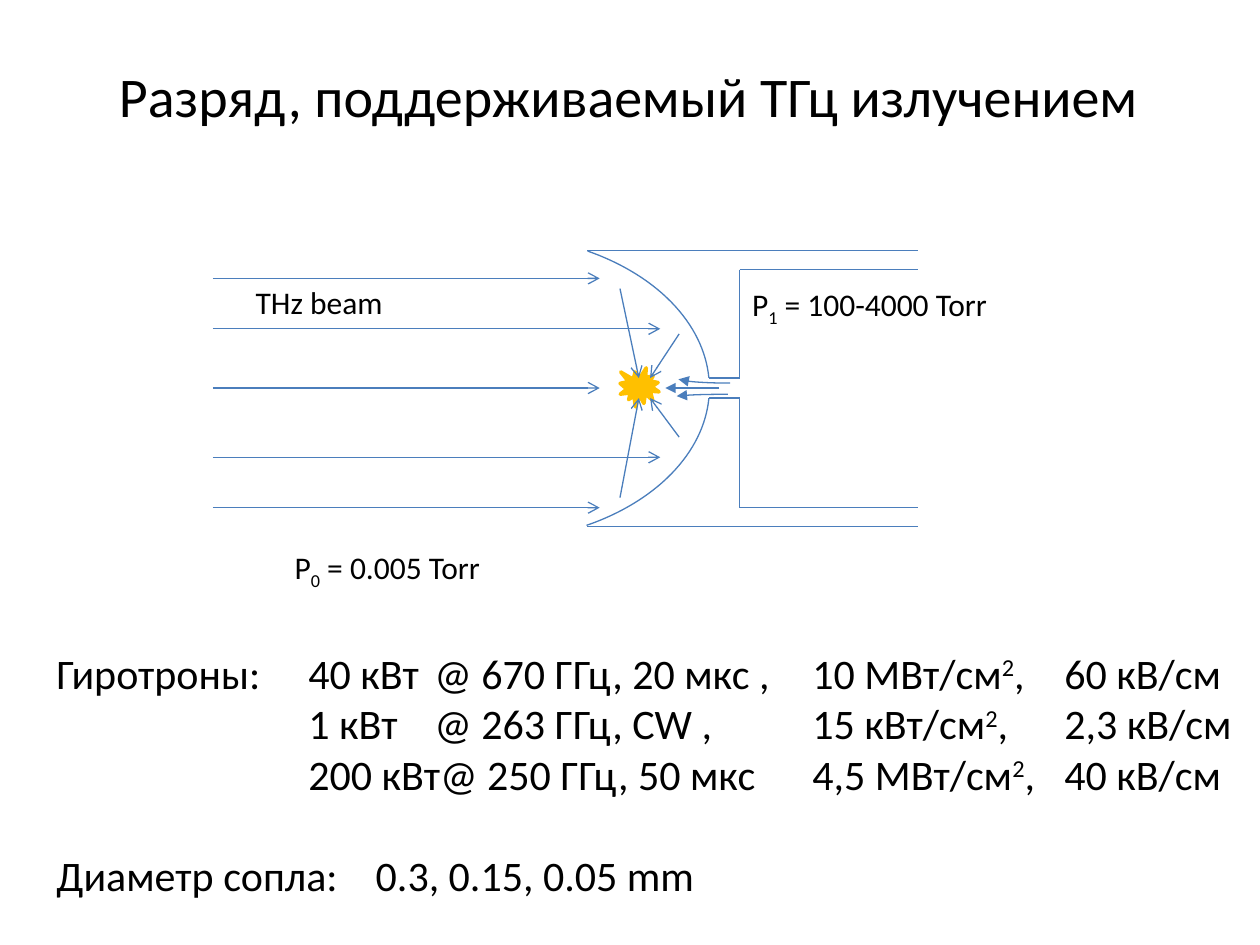
from lxml import etree
from pptx import Presentation
from pptx.dml.color import RGBColor
from pptx.enum.shapes import MSO_CONNECTOR, MSO_SHAPE
from pptx.enum.text import MSO_ANCHOR, PP_ALIGN
from pptx.oxml.ns import qn
from pptx.util import Pt

BLACK = RGBColor(0x00, 0x00, 0x00)
WHITE = RGBColor(0xFF, 0xFF, 0xFF)
BLUE = RGBColor(0x4B, 0x7E, 0xBC)
AMBER = RGBColor(0xFF, 0xC0, 0x00)
STRAIGHT = MSO_CONNECTOR.STRAIGHT
ARC, RECT, SEAL = MSO_SHAPE.ARC, MSO_SHAPE.RECTANGLE, MSO_SHAPE.EXPLOSION1
LEFT, CENTER = PP_ALIGN.LEFT, PP_ALIGN.CENTER
TOP, MIDDLE = MSO_ANCHOR.TOP, MSO_ANCHOR.MIDDLE
FONT = "Calibri"

TITLE = "Разряд, поддерживаемый ТГц излучением"
GYROTRONS = [
    ["Гиротроны:\t40 кВт\t@ 670 ГГц, 20 мкс ,\t10 МВт/см", ("2", 30), ", \t60 кВ/см"],
    ["\t1 кВт \t@ 263 ГГц, CW , \t15 кВт/см", ("2", 30), ", \t2,3 кВ/см"],
    ["\t200 кВт@ 250 ГГц, 50 мкс \t4,5 МВт/см", ("2", 30), ", \t40 кВ/см"],
]
NOZZLE = ["Диаметр сопла:\t0.3, 0.15, 0.05 mm"]

AXIS = 87.84
BEAMS = [(25.2, 221), (54, 255.6), (AXIS, 221), (127.4, 255.6), (156.2, 221)]
RAYS = [
    (232.6, 31, 243.4, 82.1),
    (266.4, 56.9, 249.8, 82.1),
    (232.6, 150.5, 243.4, 93.6),
    (266.4, 115.9, 249.8, 93.6),
]
HALVES = [(9.36, 20.16, 82.08), (167.04, 156.24, 93.6)]
MIRROR_EDGE, THROAT, CHAMBER, WALL_END = 213.84, 283.68, 300.96, 403
JETS = [(265, 79.2, 58.3, 5.8, False), (262.1, 91.4, 62.6, 3.6, True)]


def add_text(shapes, box, paragraphs, size=18, align=LEFT, anchor=TOP, wrap=True):
    tf = shapes.add_textbox(*map(Pt, box)).text_frame
    tf.word_wrap = wrap
    tf.vertical_anchor = anchor
    for i, runs in enumerate(paragraphs):
        p = tf.paragraphs[0] if i == 0 else tf.add_paragraph()
        p.alignment = align
        for run in runs:
            text, shift = run if isinstance(run, tuple) else (run, 0)
            r = p.add_run()
            r.text = text
            r.font.name = FONT
            r.font.size = Pt(size)
            r.font.color.rgb = BLACK
            if shift:
                r.font._element.set("baseline", str(shift * 1000))
    return tf


def set_tabs(p, stops):
    tabs = etree.SubElement(p._p.get_or_add_pPr(), qn("a:tabLst"))
    for stop in stops:
        etree.SubElement(tabs, qn("a:tab"), pos=str(Pt(stop)), algn="l")


def set_line(sp, color=BLUE, width=0.75, tail=None):
    sp.line.color.rgb = color
    sp.line.width = Pt(width)
    if tail:
        ln = sp._element.spPr.find(qn("a:ln"))
        etree.SubElement(ln, qn("a:tailEnd"), type=tail)


def add_line(shapes, x, y, x1, y1, x2, y2, tail=None):
    s = shapes.add_connector(STRAIGHT, Pt(x + x1), Pt(y + y1), Pt(x + x2), Pt(y + y2))
    set_line(s, tail=tail)
    etree.SubElement(s._element.spPr, qn("a:effectLst"))


def add_solid(shapes, kind, box, color):
    sp = shapes.add_shape(kind, *map(Pt, box))
    sp.shadow.inherit = False
    sp.fill.solid()
    sp.fill.fore_color.rgb = color
    sp.line.fill.background()
    return sp


def add_arc(shapes, box, start, end, tail=None, flip=False):
    sp = shapes.add_shape(ARC, *map(Pt, box))
    sp.adjustments[0] = start
    sp.adjustments[1] = end
    sp.fill.background()
    set_line(sp, tail=tail)
    sp.shadow.inherit = False
    if flip:
        sp._element.spPr.find(qn("a:xfrm")).set("flipV", "1")


def add_title(slide, box):
    add_text(slide.shapes, box, [[TITLE]], size=32, align=CENTER, anchor=MIDDLE)


def add_diagram(slide, x, y):
    shapes = slide.shapes.add_group_shape().shapes
    seal = add_solid(shapes, SEAL, (x + 232.6, y + 76.3, 22.3, 22.3), AMBER)
    set_line(seal, color=AMBER, width=2)
    add_arc(shapes, (x + 28.8, y, 254.9, 2 * AXIS), 183.896, 32.334)
    for level, end in BEAMS:
        add_line(shapes, x, y, 0, level, end, level, tail="arrow")
    for ray in RAYS:
        add_line(shapes, x, y, *ray, tail="arrow")
    add_solid(shapes, RECT, (x + 277.9, y + 82.08, 79.2, 11.52), WHITE)
    for outer, inner, throat in HALVES:
        add_line(shapes, x, y, MIRROR_EDGE, outer, WALL_END, outer)
        add_line(shapes, x, y, CHAMBER, inner, WALL_END, inner)
        add_line(shapes, x, y, CHAMBER, inner, CHAMBER, throat)
        add_line(shapes, x, y, THROAT, throat, CHAMBER, throat)
    for left, top, w, h, flip in JETS:
        add_arc(shapes, (x + left, y + top, w, h), 39.006, 107.083, "triangle", flip)
    add_line(shapes, x, y, 289.4, AXIS, 258.5, AXIS, tail="triangle")
    add_text(shapes, (x + 17.3, y + 24.5, 88, 29), [["THz beam"]], wrap=False)
    add_text(shapes, (x + 39.6, y + 175.7, 136, 29), [["P", ("0", -25), " = 0.005 Torr"]])
    add_text(shapes, (x + CHAMBER, y + 25.2, 165.6, 29),
             [["P", ("1", -25), " = 100-4000 Torr"]])


def add_parameters(slide, box):
    tf = add_text(slide.shapes, box, GYROTRONS + [NOZZLE], size=24)
    *rows, nozzle = tf.paragraphs
    nozzle.space_before = Pt(29)
    for p in rows:
        set_tabs(p, (144, 216, 432, 576))
    set_tabs(nozzle, (182.4,))


def main():
    prs = Presentation()
    prs.slide_width, prs.slide_height = Pt(720), Pt(540)
    slide = prs.slides.add_slide(prs.slide_layouts[6])
    add_title(slide, (35.3, 9.4, 648, 90))
    add_diagram(slide, 121.7, 133.9)
    add_parameters(slide, (25.2, 366.5, 686.2, 152.6))
    prs.save("out.pptx")


if __name__ == "__main__":
    main()
